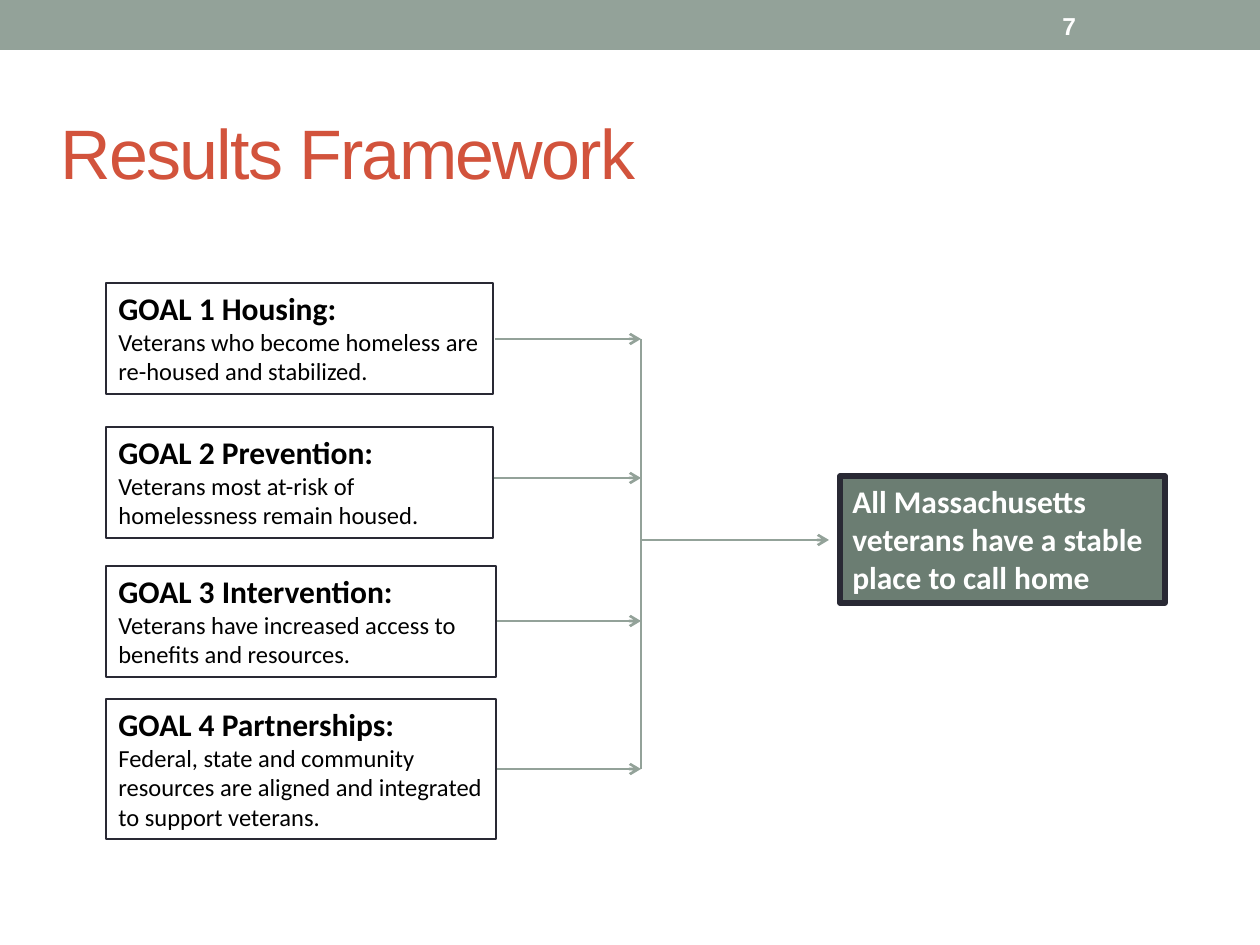
import pptx
import pptx.util
import pptx.dml.color
import pptx.enum.shapes
import pptx.enum.text
import pptx.oxml
import pptx.oxml.ns

EMU_PER_PX = 914400 / 126
COLORS = {"sage": "93A299", "moss": "6B7D72", "ink": "292934",
          "rust": "D2533C", "black": "000000", "white": "FFFFFF"}
SHAPES = pptx.enum.shapes.MSO_SHAPE
ANCHORS = pptx.enum.text.MSO_ANCHOR


def px(*lengths):
    return [pptx.util.Emu(round(length * EMU_PER_PX)) for length in lengths]


def write(para, text, size, color="black", bold=False, font="Calibri"):
    para.alignment = pptx.enum.text.PP_ALIGN.LEFT
    span = para.add_run()
    span.text = text
    span.font.name = font
    span.font.size = pptx.util.Pt(size)
    span.font.bold = bold
    span.font.color.rgb = pptx.dml.color.RGBColor.from_string(COLORS[color])
    return span


deck = pptx.Presentation()
deck.slide_width, deck.slide_height = px(1260, 945)
page = deck.slides.add_slide(deck.slide_layouts[5])

# Title and page number
title = page.shapes.title
title.left, title.top, title.width, title.height = px(48, 84, 1101, 136)
title.text_frame.vertical_anchor = ANCHORS.MIDDLE
span = write(title.text_frame.paragraphs[0], "Results Framework", 40, "rust", font="Arial")
span.font._element.set("spc", "-100")

# Banner, goals and outcome: box, fill, line width, lines of (text, size, colour, bold)
goals = [
    (283, 387, 111, "GOAL 1 Housing:",
     "Veterans who become homeless are re-housed and stabilized."),
    (427, 387, 111, "GOAL 2 Prevention:",
     "Veterans most at-risk of homelessness remain housed."),
    (566, 390, 111, "GOAL 3 Intervention:",
     "Veterans have increased access to benefits and resources."),
    (699, 390, 140, "GOAL 4 Partnerships:",
     "Federal, state and community resources are aligned and integrated to support veterans."),
]
boxes = [((0, 0, 1260, 50), "sage", 0, [])]
for top, width, height, heading, detail in goals:
    boxes.append(((106, top, width, height), None, 1.5,
                  [(heading, 18, "black", True), (detail, 14, "black", False)]))
boxes.append(((840, 476, 325, 127), "moss", 3,
              [("All Massachusetts veterans have a stable place to call home", 18, "white", True)]))

for place, fill, line_width, lines in boxes:
    box = page.shapes.add_shape(SHAPES.RECTANGLE, *px(*place))
    box.shadow.inherit = False
    if fill:
        box.fill.solid()
        box.fill.fore_color.rgb = pptx.dml.color.RGBColor.from_string(COLORS[fill])
    else:
        box.fill.background()
    if line_width:
        box.line.width = pptx.util.Pt(line_width)
        box.line.color.rgb = pptx.dml.color.RGBColor.from_string(COLORS["ink"])
    else:
        box.line.fill.background()
    frame = box.text_frame
    frame.word_wrap = True
    frame.vertical_anchor = ANCHORS.TOP
    for index, (text, size, color, bold) in enumerate(lines):
        para = frame.add_paragraph() if index else frame.paragraphs[0]
        write(para, text, size, color, bold)

number = page.shapes.add_textbox(*px(1050, 3, 147, 45))
number.text_frame.word_wrap = True
number.text_frame.vertical_anchor = ANCHORS.MIDDLE
write(number.text_frame.paragraphs[0], "7", 14, "white", True, "Arial")

# Arrows from the goals to the trunk, the trunk, and the arrow to the outcome
trunk = 641
links = [
    (495, 339, trunk, 339, True),
    (494, 478, trunk, 478, True),
    (497, 621, trunk, 621, True),
    (497, 769, trunk, 769, True),
    (trunk, 339, trunk, 769, False),
    (trunk, 540, 829, 540, True),
]
for *ends, has_arrow in links:
    link = page.shapes.add_connector(pptx.enum.shapes.MSO_CONNECTOR.STRAIGHT, *px(*ends))
    link.line.width = pptx.util.Pt(1.5)
    link.line.color.rgb = pptx.dml.color.RGBColor.from_string(COLORS["sage"])
    if has_arrow:
        arrow = pptx.oxml.parse_xml(f'<a:tailEnd {pptx.oxml.ns.nsdecls("a")} type="arrow"/>')
        link.line._get_or_add_ln().append(arrow)
    link._element.spPr.append(
        pptx.oxml.parse_xml(f'<a:effectLst {pptx.oxml.ns.nsdecls("a")}/>'))

deck.save("out.pptx")
